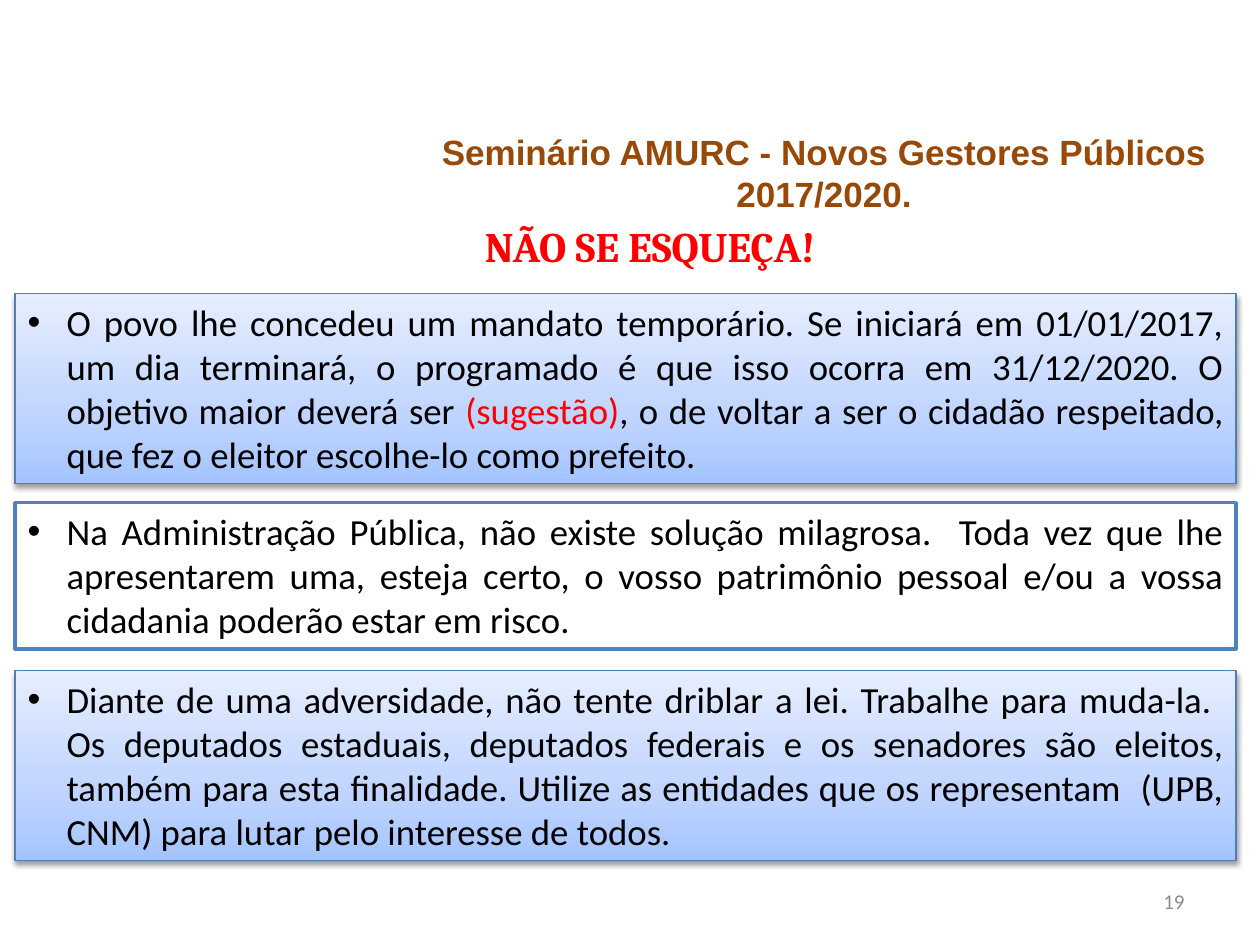
from dataclasses import dataclass

from lxml import etree
from pptx import Presentation
from pptx.dml.color import RGBColor
from pptx.enum.shapes import MSO_SHAPE
from pptx.enum.text import MSO_ANCHOR, MSO_AUTO_SIZE, PP_ALIGN
from pptx.oxml.ns import qn
from pptx.util import Inches, Pt

RECT = MSO_SHAPE.RECTANGLE
TOP, MIDDLE = MSO_ANCHOR.TOP, MSO_ANCHOR.MIDDLE
GROW, FIXED = MSO_AUTO_SIZE.SHAPE_TO_FIT_TEXT, MSO_AUTO_SIZE.NONE
CENTER, RIGHT, JUSTIFY = PP_ALIGN.CENTER, PP_ALIGN.RIGHT, PP_ALIGN.JUSTIFY


@dataclass(frozen=True)
class Theme:
    brown: str = "984807"
    red: str = "FF0000"
    black: str = "000000"
    white: str = "FFFFFF"
    gray: str = "8C8C8C"
    edge: str = "4B7EBC"
    frame: str = "4F81BD"
    blend: tuple = ((0, "A4C4FF"), (35, "BFD4FF"), (100, "E6EEFF"))
    head: int = 20
    title: int = 24
    body: int = 21
    small: int = 12


def add(parent, tag, **attrs):
    node = etree.SubElement(parent, qn(tag))
    for key, value in attrs.items():
        node.set(key, str(value))
    return node


class Page:
    def __init__(self, slide, theme):
        self.slide = slide
        self.theme = theme

    def put_runs(self, par, runs, size, font="Calibri", bold=False):
        for text, color in runs:
            run = par.add_run()
            run.text = text
            run.font.size = Pt(size)
            run.font.name = font
            run.font.bold = bold
            run.font.color.rgb = RGBColor.from_string(color)

    def label(self, box, text, color, size, align, font="Calibri",
              bold=False, anchor=TOP, fit=FIXED):
        shape = self.slide.shapes.add_textbox(*map(Inches, box))
        frame = shape.text_frame
        frame.word_wrap = True
        frame.auto_size = fit
        frame.vertical_anchor = anchor
        par = frame.paragraphs[0]
        par.alignment = align
        self.put_runs(par, [(text, color)], size, font, bold)

    def shade(self, shape):
        """Fill with the three-stop blend and drop a soft shadow."""
        shape.fill.gradient()
        shape.fill.gradient_angle = 90
        props = shape.element.spPr
        stops = props.find(qn("a:gradFill")).find(qn("a:gsLst"))
        for stop in list(stops):
            stops.remove(stop)
        for pos, color in self.theme.blend:
            stop = add(stops, "a:gs", pos=pos * 1000)
            add(stop, "a:srgbClr", val=color)
        shadow = add(props.find(qn("a:effectLst")), "a:outerShdw",
                     blurRad=Pt(3.1), dist=Pt(1.6), dir=5400000,
                     rotWithShape=0)
        tint = add(shadow, "a:srgbClr", val=self.theme.black)
        add(tint, "a:alpha", val=38000)

    def panel(self, top, height, runs, shaded):
        theme = self.theme
        box = map(Inches, (0.12, top, 9.69, height))
        shape = self.slide.shapes.add_shape(RECT, *box)
        shape.shadow.inherit = False
        color, width = (theme.edge, 0.75) if shaded else (theme.frame, 2)
        shape.line.color.rgb = RGBColor.from_string(color)
        shape.line.width = Pt(width)
        if shaded:
            self.shade(shape)
        else:
            shape.fill.solid()
            shape.fill.fore_color.rgb = RGBColor.from_string(theme.white)

        frame = shape.text_frame
        frame.word_wrap = True
        frame.auto_size = GROW
        frame.vertical_anchor = TOP
        par = frame.paragraphs[0]
        par.alignment = JUSTIFY
        # Hanging bullet
        props = par._p.get_or_add_pPr()
        props.set("marL", str(Inches(0.31)))
        props.set("indent", str(-Inches(0.31)))
        add(props, "a:buFont", typeface="Arial")
        add(props, "a:buChar", char="•")
        self.put_runs(par, runs, theme.body)


def main():
    deck = Presentation()
    deck.slide_width, deck.slide_height = Inches(10), Inches(7.5)
    theme = Theme()
    page = Page(deck.slides.add_slide(deck.slide_layouts[6]), theme)

    # Seminar name and title
    page.label((3.35, 0.99, 6.38, 0.77),
               "Seminário AMURC - Novos Gestores Públicos 2017/2020.",
               theme.brown, theme.head, CENTER, "Arial", True, fit=GROW)
    page.label((3.19, 1.7, 3.94, 0.48), "NÃO SE ESQUEÇA!",
               theme.red, theme.title, CENTER, "Cambria", True)

    # Advice panels
    term = [
        ("O povo lhe concedeu um mandato temporário. Se iniciará em "
         "01/01/2017, um dia terminará, o programado é que isso ocorra em "
         "31/12/2020. O objetivo maior deverá ser ", theme.black),
        ("(sugestão)", theme.red),
        (", o de voltar a ser o cidadão respeitado, que fez o eleitor "
         "escolhe-lo como prefeito.", theme.black),
    ]
    risk = [
        ("Na Administração Pública, não existe solução milagrosa.  Toda vez "
         "que lhe apresentarem uma, esteja certo, o vosso patrimônio pessoal "
         "e/ou a vossa cidadania poderão estar em risco.", theme.black),
    ]
    law = [
        ("Diante de uma adversidade, não tente driblar a lei. Trabalhe para "
         "muda-la.  Os deputados estaduais, deputados federais e os senadores "
         "são eleitos, também para esta finalidade. Utilize as entidades que "
         "os representam  (UPB, CNM) para lutar pelo interesse de todos.",
         theme.black),
    ]
    page.panel(2.33, 1.51, term, True)
    page.panel(3.99, 1.16, risk, False)
    page.panel(5.32, 1.51, law, True)

    # Page number
    page.label((7.17, 6.95, 2.33, 0.4), "19", theme.gray, theme.small,
               RIGHT, anchor=MIDDLE)

    deck.save("out.pptx")


if __name__ == "__main__":
    main()
